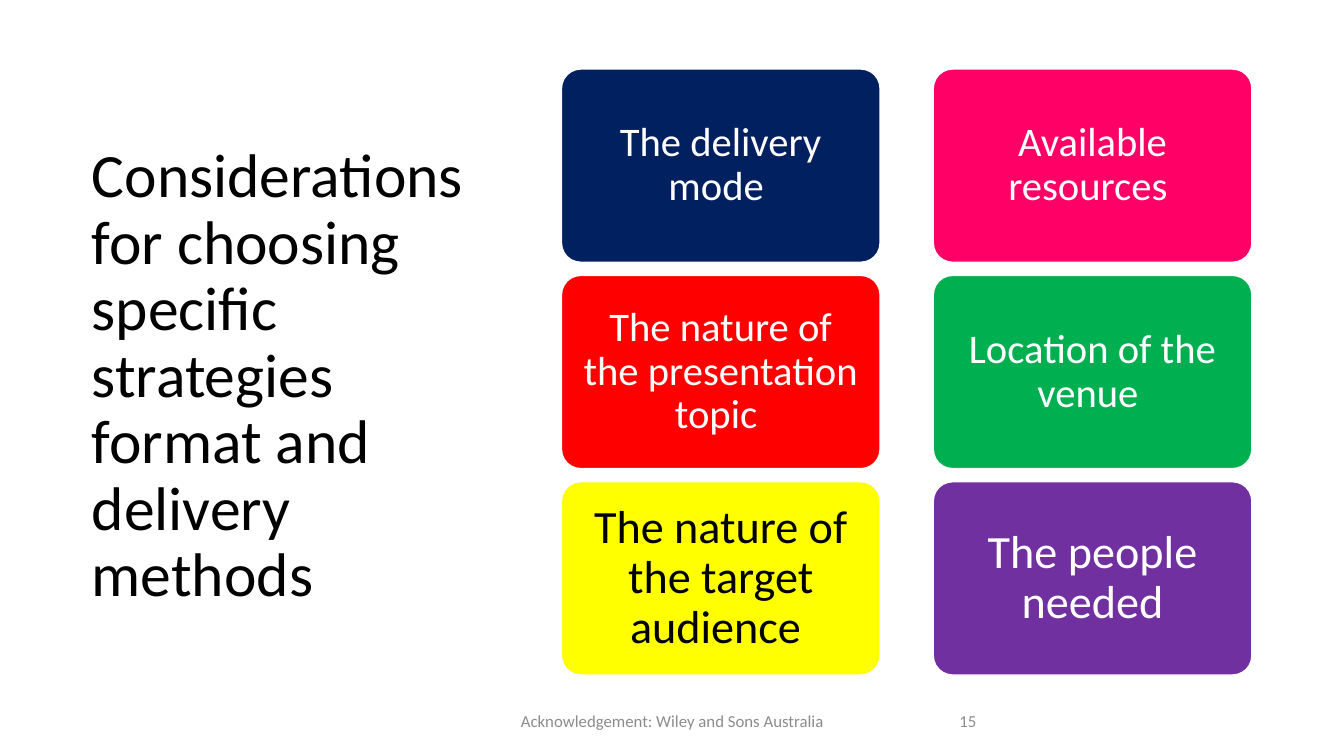
from typing import NamedTuple

from pptx import Presentation
from pptx.dml.color import RGBColor
from pptx.enum.shapes import MSO_SHAPE
from pptx.enum.text import MSO_ANCHOR, MSO_AUTO_SIZE, PP_ALIGN
from pptx.util import Cm, Pt

FONT = "Calibri"
LEFT, TOP = 14.15, 1.74
WIDE, HIGH = 8.03, 4.87
STEP_X, STEP_Y = 9.37, 5.2


class Card(NamedTuple):
    text: str
    col: int
    row: int
    fill: str
    size: int = 29
    inset: float = 0.31
    ink: str = "FFFFFF"


class Note(NamedTuple):
    text: str
    left: float
    width: float
    align: PP_ALIGN


CARDS = [
    Card("The delivery mode ", 0, 0, "002060"),
    Card("The nature of the presentation topic ", 0, 1, "FF0000"),
    Card("The nature of the target audience ", 0, 2, "FFFF00", 33, 0.35, "000000"),
    Card("Available resources ", 1, 0, "FF0066"),
    Card("Location of the venue ", 1, 1, "00B050"),
    Card("The people needed", 1, 2, "7030A0", 33, 0.35),
]

NOTES = [
    Note("Acknowledgement: Wiley and Sons Australia", 11.23, 11.43, PP_ALIGN.CENTER),
    Note("15", 23.93, 7.62, PP_ALIGN.LEFT),
]


def paint(item, tone: str) -> None:
    """Colour a fill or a font."""
    if hasattr(item, "solid"):
        item.solid()
        item.fore_color.rgb = RGBColor.from_string(tone)
    else:
        item.color.rgb = RGBColor.from_string(tone)


def write(shape, text: str, size: int, ink: str, align: PP_ALIGN,
          space: float = 1.0) -> None:
    frame = shape.text_frame
    frame.text = text
    frame.word_wrap = True
    frame.auto_size = MSO_AUTO_SIZE.NONE
    frame.vertical_anchor = MSO_ANCHOR.MIDDLE
    para = frame.paragraphs[0]
    para.alignment = align
    para.line_spacing = space
    font = para.runs[0].font
    font.name, font.size = FONT, Pt(size)
    paint(font, ink)


def draw_card(slide, card: Card) -> None:
    shape = slide.shapes.add_shape(
        MSO_SHAPE.ROUNDED_RECTANGLE,
        Cm(LEFT + card.col * STEP_X), Cm(TOP + card.row * STEP_Y),
        Cm(WIDE), Cm(HIGH))
    shape.adjustments[0] = 0.1
    shape.shadow.inherit = False
    paint(shape.fill, card.fill)
    paint(shape.line.fill, "FFFFFF")
    shape.line.width = Pt(1)
    write(shape, card.text, card.size, card.ink, PP_ALIGN.CENTER, 0.9)
    frame = shape.text_frame
    frame.margin_left = frame.margin_right = Cm(card.inset)
    frame.margin_top = frame.margin_bottom = Cm(card.inset)


def draw_note(slide, note: Note) -> None:
    box = slide.shapes.add_textbox(
        Cm(note.left), Cm(17.65), Cm(note.width), Cm(1.02))
    write(box, note.text, 12, "8C8C8C", note.align)


def main() -> None:
    deck = Presentation()
    deck.slide_width, deck.slide_height = Cm(33.87), Cm(19.05)
    slide = deck.slides.add_slide(deck.slide_layouts[5])

    # Title
    title = slide.shapes.title
    title.left, title.top = Cm(2.06), Cm(2.92)
    title.width, title.height = Cm(10.06), Cm(13.18)
    write(title, "Considerations for choosing specific strategies format "
          "and delivery methods", 44, "000000", PP_ALIGN.LEFT, 0.9)

    # Grid of cards
    for card in CARDS:
        draw_card(slide, card)

    # Footer
    for note in NOTES:
        draw_note(slide, note)

    deck.save("out.pptx")


if __name__ == "__main__":
    main()
